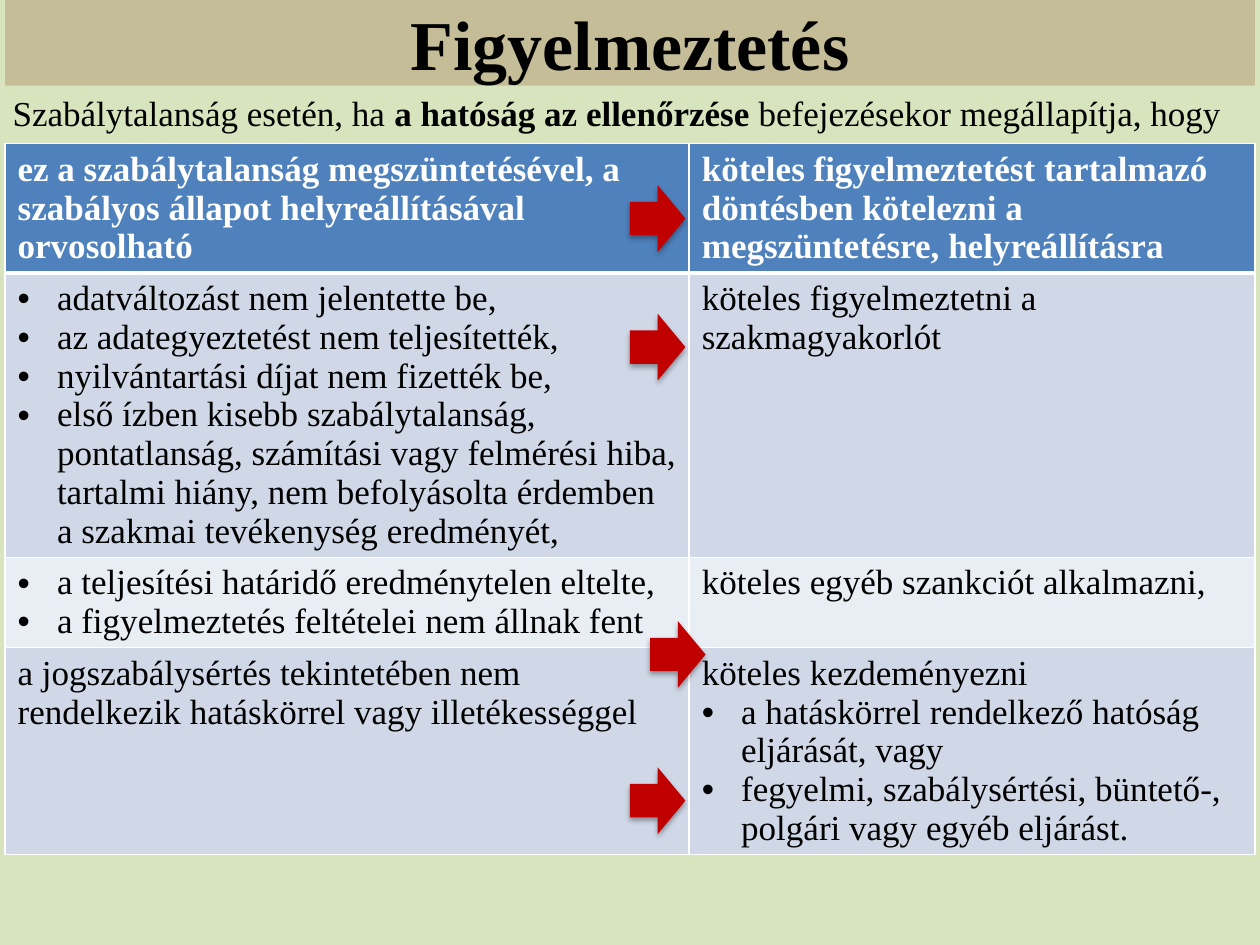
from lxml.etree import SubElement
from pptx import Presentation
from pptx.dml.color import RGBColor
from pptx.enum.shapes import MSO_SHAPE as Shape
from pptx.enum.text import MSO_ANCHOR as Anchor, MSO_AUTO_SIZE as AutoSize, PP_ALIGN as Align
from pptx.oxml import parse_xml
from pptx.oxml.ns import nsdecls, qn
from pptx.util import Pt

BULLET = "• "
HEADER = (
    ["ez a szabálytalanság megszüntetésével, a szabályos állapot helyreállításával orvosolható"],
    ["köteles figyelmeztetést tartalmazó döntésben kötelezni a megszüntetésre, helyreállításra"],
)
CASES = [
    (
        [
            "• adatváltozást nem jelentette be,",
            "• az adategyeztetést nem teljesítették,",
            "• nyilvántartási díjat nem fizették be,",
            "• első ízben kisebb szabálytalanság, pontatlanság, számítási vagy felmérési hiba, "
            "tartalmi hiány, nem befolyásolta érdemben a szakmai tevékenység eredményét,",
        ],
        ["köteles figyelmeztetni a szakmagyakorlót"],
    ),
    (
        [
            "• a teljesítési határidő eredménytelen eltelte,",
            "• a figyelmeztetés feltételei nem állnak fent",
        ],
        ["köteles egyéb szankciót alkalmazni,"],
    ),
    (
        ["a jogszabálysértés tekintetében nem rendelkezik hatáskörrel vagy illetékességgel"],
        [
            "köteles kezdeményezni",
            "• a hatáskörrel rendelkező hatóság eljárását, vagy",
            "• fegyelmi, szabálysértési, büntető-, polgári vagy egyéb eljárást.",
        ],
    ),
]
INTRO = [
    ("Szabálytalanság esetén, ha ", False),
    ("a hatóság az ellenőrzése", True),
    (" befejezésekor megállapítja, hogy", False),
]
ARROWS = [(360, 105.84), (360, 179.28), (371.52, 354.96), (360, 438.48)]


def rgb(code):
    """Turn a hex string into a colour."""
    return RGBColor.from_string(code)


def paint(fill, code):
    """Make a fill solid in the given colour."""
    fill.solid()
    fill.fore_color.rgb = rgb(code)


class WarningSlide:
    """Hold the style and the current slide."""

    font, size, ink, light = "Times New Roman", 20, "000000", "FFFFFF"
    head, bands, accent = "4F81BD", ("D0D8E8", "E9EDF4"), "C00000"

    def __init__(self, deck):
        """Add a title and body slide with its background."""
        self.slide = deck.slides.add_slide(deck.slide_layouts[1])
        paint(self.slide.background.fill, "D7E4BD")

    def style(self, run, size=None, color=None, bold=False):
        """Format one run."""
        run.font.name = self.font
        run.font.size = Pt(size or self.size)
        run.font.bold = bold
        run.font.color.rgb = rgb(color or self.ink)

    def place(self, holder, left, top, width, height):
        """Move a placeholder to a box in points."""
        holder.left, holder.top = Pt(left), Pt(top)
        holder.width, holder.height = Pt(width), Pt(height)
        holder.text_frame.auto_size = AutoSize.NONE

    def title(self, wording, *box):
        """Fill the title band."""
        heading = self.slide.shapes.title
        self.place(heading, *box)
        paint(heading.fill, "C4BD97")
        heading.text_frame.text = wording
        heading.text_frame.vertical_anchor = Anchor.MIDDLE
        line = heading.text_frame.paragraphs[0]
        line.alignment = Align.CENTER
        self.style(line.runs[0], 40, bold=True)

    def body(self, parts, *box):
        """Fill the introduction with plain and bold parts."""
        intro = self.slide.placeholders[1]
        self.place(intro, *box)
        line = intro.text_frame.paragraphs[0]
        props = line._p.get_or_add_pPr()
        props.set("marL", "0")
        props.set("indent", "0")
        SubElement(props, qn("a:buNone"))
        for wording, bold in parts:
            run = line.add_run()
            run.text = wording
            self.style(run, bold=bold)

    def bullet(self, paragraph):
        """Give a paragraph a hanging bullet."""
        props = paragraph._p.get_or_add_pPr()
        indent = Pt(22.5)
        props.set("marL", str(indent))
        props.set("indent", str(-indent))
        SubElement(props, qn("a:buFont"), typeface="Arial")
        SubElement(props, qn("a:buChar"), char=BULLET.strip())

    def borders(self, cell, widths):
        """Draw the cell edges in the order left, right, top, bottom."""
        props = cell._tc.get_or_add_tcPr()
        for place, (edge, width) in enumerate(zip("LRTB", widths)):
            props.insert(place, parse_xml(
                f'<a:ln{edge} {nsdecls("a")} w="{Pt(width)}"><a:solidFill>'
                f'<a:srgbClr val="{self.light}"/></a:solidFill></a:ln{edge}>'))

    def cell(self, cell, lines, fill, color, bold):
        """Fill one table cell."""
        cell.text_frame.text = "\n".join(line.removeprefix(BULLET) for line in lines)
        for paragraph, line in zip(cell.text_frame.paragraphs, lines):
            if line.startswith(BULLET):
                self.bullet(paragraph)
            self.style(paragraph.runs[0], color=color, bold=bold)
        paint(cell.fill, fill)

    def table(self, rows, left, top, widths, heights):
        """Add the table of cases and duties."""
        box = map(Pt, (left, top, sum(widths), sum(heights)))
        grid = self.slide.shapes.add_table(len(rows), len(widths), *box).table
        for column, width in zip(grid.columns, widths):
            column.width = Pt(width)
        for index, (row, height) in enumerate(zip(rows, heights)):
            grid.rows[index].height = Pt(height)
            header = index == 0
            fill = self.head if header else self.bands[(index - 1) % 2]
            color = self.light if header else self.ink
            edges = (1, 1, 3 if index == 1 else 1, 3 if header else 1)
            for cell, lines in zip(grid.rows[index].cells, row):
                self.cell(cell, lines, fill, color, header)
                self.borders(cell, edges)

    def arrow(self, left, top):
        """Add a red arrow with a soft shadow below."""
        pointer = self.slide.shapes.add_shape(
            Shape.RIGHT_ARROW, Pt(left), Pt(top), Pt(31.68), Pt(38.16))
        paint(pointer.fill, self.accent)
        pointer.line.fill.background()
        pointer.shadow.inherit = False
        effects = pointer._element.spPr.find(qn("a:effectLst"))
        shadow = SubElement(effects, qn("a:outerShdw"), blurRad=str(Pt(3.1)),
                            dist=str(Pt(1.8)), dir="5400000", rotWithShape="0")
        tint = SubElement(shadow, qn("a:srgbClr"), val=self.ink)
        SubElement(tint, qn("a:alpha"), val="35000")


def main():
    """Build and save the slide."""
    deck = Presentation()
    deck.slide_width, deck.slide_height = Pt(720), Pt(540)
    page = WarningSlide(deck)
    page.title("Figyelmeztetés", 2.88, 0, 714.24, 48.96)
    page.body(INTRO, 0, 48.96, 717.12, 491.04)
    page.table([HEADER, *CASES], 2.88, 82.08, (390.96, 323.28), (48.24, 144.72, 48.24, 114.48))
    for left, top in ARROWS:
        page.arrow(left, top)
    deck.save("out.pptx")


if __name__ == "__main__":
    main()
